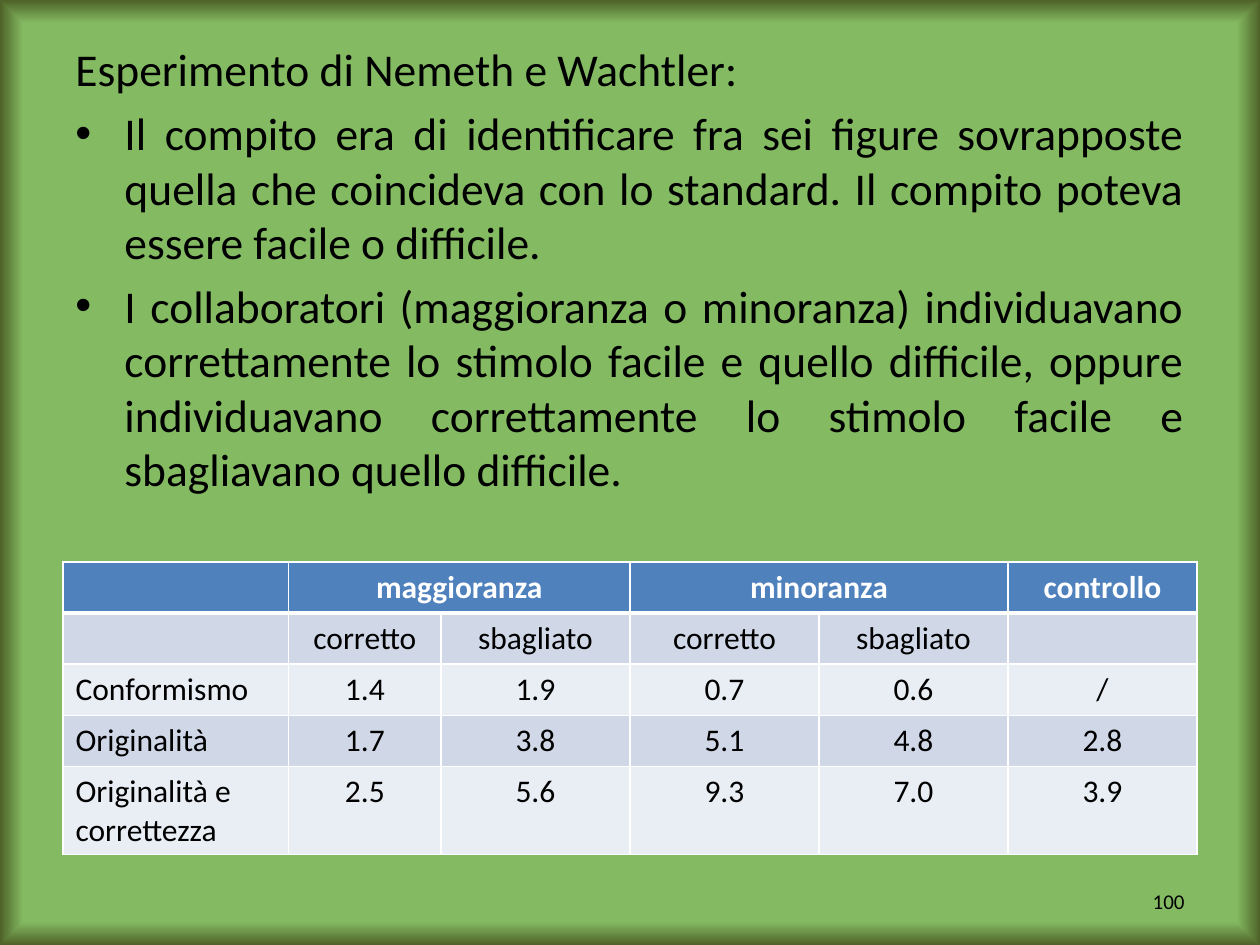
import pptx
import pptx.dml.color
import pptx.enum.text
import pptx.oxml
import pptx.oxml.ns
import pptx.util
from pptx.util import Cm

FONT = "Calibri"
COLORS = {
    "green": "84BB62",
    "olive": "4F6228",
    "black": "000000",
    "white": "FFFFFF",
    "header": "4F81BD",
    "band_dark": "D0D8E8",
    "band_light": "E9EDF4",
}
ALIGN = pptx.enum.text.PP_ALIGN
ANCHOR = pptx.enum.text.MSO_ANCHOR

HEADING = "Esperimento di Nemeth e Wachtler:"
POINTS = [
    "Il compito era di identificare fra sei figure sovrapposte quella che coincideva "
    "con lo standard. Il compito poteva essere facile o difficile.",
    "I collaboratori (maggioranza o minoranza) individuavano correttamente lo stimolo "
    "facile e quello difficile, oppure individuavano correttamente lo stimolo facile e "
    "sbagliavano quello difficile.",
]
RESULTS = [
    ["", "maggioranza", "", "minoranza", "", "controllo"],
    ["", "corretto", "sbagliato", "corretto", "sbagliato", ""],
    ["Conformismo", "1.4", "1.9", "0.7", "0.6", "/"],
    ["Originalità", "1.7", "3.8", "5.1", "4.8", "2.8"],
    ["Originalità e correttezza", "2.5", "5.6", "9.3", "7.0", "3.9"],
]
COLUMN_WIDTHS = [4.55, 3.07] + [3.81] * 4
ROW_HEIGHT = 1.03


def rgb(name):
    return pptx.dml.color.RGBColor.from_string(COLORS[name])


def xml(tag, content):
    namespace = pptx.oxml.ns.nsdecls("a")
    return pptx.oxml.parse_xml(f"<a:{tag} {namespace}{content}")


def write(paragraph, text, size=18, color="black", bold=False, align=ALIGN.LEFT):
    paragraph.alignment = align
    run = paragraph.add_run()
    run.text = text
    run.font.name = FONT
    run.font.size = pptx.util.Pt(size)
    run.font.bold = bold
    run.font.color.rgb = rgb(color)


def paint_background(slide):
    """Fill the slide with green that darkens in a thin frame at the edges."""
    fill = slide.background.fill
    fill.gradient()
    for stop, position, color in zip(fill.gradient_stops, (0.95, 1), ("green", "olive")):
        stop.position = position
        stop.color.rgb = rgb(color)
    linear = slide.element.find(".//" + pptx.oxml.ns.qn("a:lin"))
    shade = xml("path", ' path="shape"><a:fillToRect l="50000" t="50000" '
                        'r="50000" b="50000"/></a:path>')
    linear.getparent().replace(linear, shade)


def add_text_frame(slide, left, top, width, height, anchor=ANCHOR.TOP):
    box = slide.shapes.add_textbox(Cm(left), Cm(top), Cm(width), Cm(height))
    frame = box.text_frame
    frame.word_wrap = True
    frame.vertical_anchor = anchor
    return frame


def add_description(slide):
    frame = add_text_frame(slide, 1.27, 0.71, 22.86, 9.63)
    for index, text in enumerate([HEADING] + POINTS):
        paragraph = frame.add_paragraph() if index else frame.paragraphs[0]
        paragraph.space_before = pptx.util.Pt(5.2)
        write(paragraph, text, size=26, align=ALIGN.JUSTIFY)
        properties = paragraph._p.get_or_add_pPr()
        properties.set("marL", str(Cm(0.99)))
        properties.set("indent", str(-Cm(0.99)))
        if index:
            properties.append(xml("buFont", ' typeface="Arial"/>'))
            properties.append(xml("buChar", ' char="•"/>'))
        else:
            properties.append(xml("buNone", "/>"))


def set_borders(cell, top=1, bottom=1):
    """Draw white cell borders, with widths in points."""
    properties = cell._tc.get_or_add_tcPr()
    for side, width in (("L", 1), ("R", 1), ("T", top), ("B", bottom)):
        properties.append(xml(
            f"ln{side}", f' w="{pptx.util.Pt(width)}"><a:solidFill><a:srgbClr '
                         f'val="{COLORS["white"]}"/></a:solidFill></a:ln{side}>'))


def add_results_table(slide):
    table = slide.shapes.add_table(
        len(RESULTS), len(COLUMN_WIDTHS), Cm(1.27), Cm(11.33),
        Cm(sum(COLUMN_WIDTHS)), Cm(ROW_HEIGHT * len(RESULTS))).table
    for column, width in zip(table.columns, COLUMN_WIDTHS):
        column.width = Cm(width)
    for row_index, values in enumerate(RESULTS):
        table.rows[row_index].height = Cm(ROW_HEIGHT)
        is_header = row_index == 0
        band = "band_dark" if row_index % 2 else "band_light"
        for column_index, value in enumerate(values):
            cell = table.cell(row_index, column_index)
            set_borders(cell, top=3 if row_index == 1 else 1, bottom=3 if is_header else 1)
            cell.fill.solid()
            cell.fill.fore_color.rgb = rgb("header" if is_header else band)
            if value:
                write(cell.text_frame.paragraphs[0], value, bold=is_header,
                      color="white" if is_header else "black",
                      align=ALIGN.CENTER if column_index else ALIGN.LEFT)
    for first in (1, 3):
        table.cell(0, first).merge(table.cell(0, first + 1))


def add_page_number(slide):
    frame = add_text_frame(slide, 18.21, 17.65, 5.92, 1.02, anchor=ANCHOR.MIDDLE)
    write(frame.paragraphs[0], "100", size=12, align=ALIGN.RIGHT)


def main():
    presentation = pptx.Presentation()
    presentation.slide_width = Cm(25.4)
    presentation.slide_height = Cm(19.05)
    slide = presentation.slides.add_slide(presentation.slide_layouts[6])
    paint_background(slide)
    add_description(slide)
    add_page_number(slide)
    add_results_table(slide)
    presentation.save("out.pptx")


if __name__ == "__main__":
    main()
